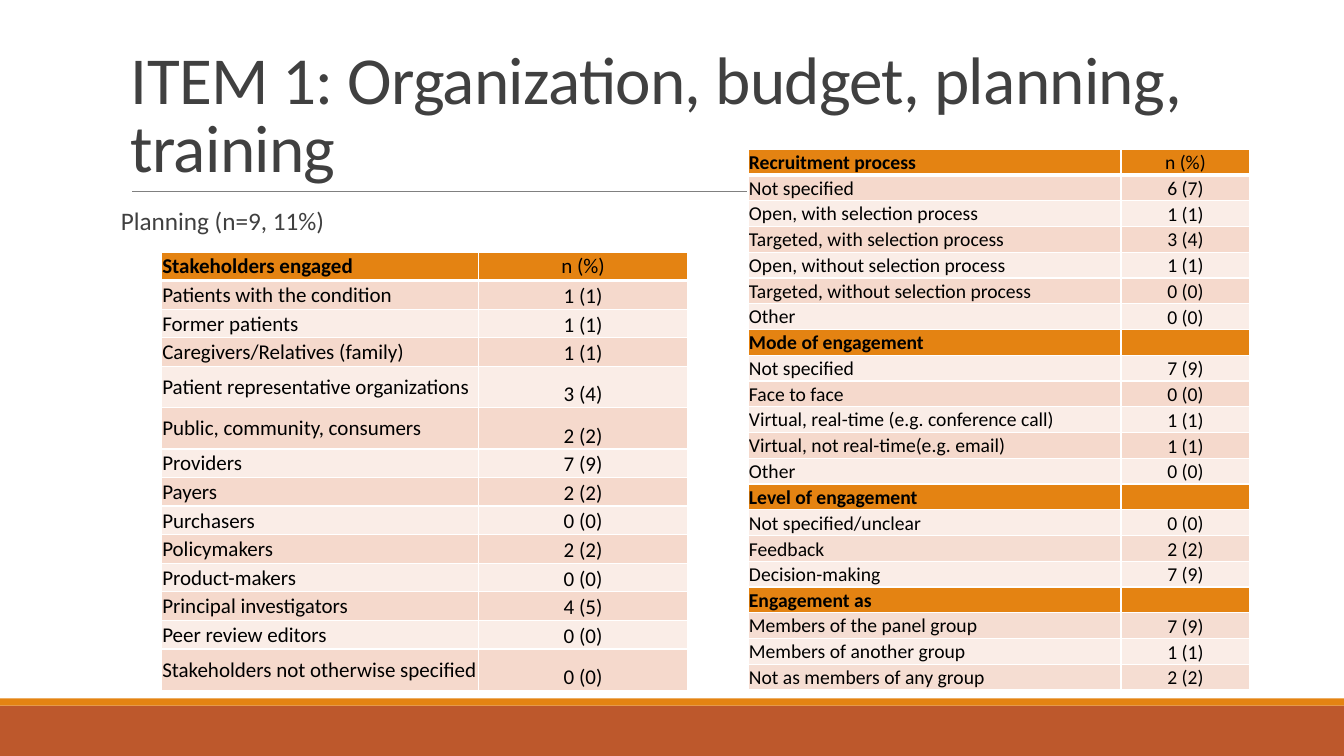
from lxml.etree import SubElement
from pptx import Presentation
from pptx.dml.color import RGBColor
from pptx.enum.shapes import MSO_CONNECTOR as CONN, MSO_SHAPE as SHAPE
from pptx.enum.text import MSO_ANCHOR as ANCHOR, PP_ALIGN as ALIGN
from pptx.oxml.ns import qn
from pptx.util import Inches, Pt

WHITE = RGBColor(0xFF, 0xFF, 0xFF)
BLACK = RGBColor(0x00, 0x00, 0x00)
INK = RGBColor(0x40, 0x40, 0x40)
GREY = RGBColor(0x80, 0x80, 0x80)
ORANGE = RGBColor(0xE4, 0x83, 0x12)
RUST = RGBColor(0xBD, 0x58, 0x2C)
PINK = RGBColor(0xF5, 0xD9, 0xCC)
ROSE = RGBColor(0xF5, 0xDD, 0xD2)
PALE = RGBColor(0xFA, 0xED, 0xE7)

# Each section: heading, heading value, two alternating row fills, rows
STAKEHOLDERS = [
    ("Stakeholders engaged", "n (%)", (PINK, PALE), [
        ("Patients with the condition", "1 (1)"),
        ("Former patients", "1 (1)"),
        ("Caregivers/Relatives (family)", "1 (1)"),
        ("Patient representative organizations", "3 (4)"),
        ("Public, community, consumers", "2 (2)"),
        ("Providers", "7 (9)"),
        ("Payers", "2 (2)"),
        ("Purchasers", "0 (0)"),
        ("Policymakers", "2 (2)"),
        ("Product-makers", "0 (0)"),
        ("Principal investigators", "4 (5)"),
        ("Peer review editors", "0 (0)"),
        ("Stakeholders not otherwise specified", "0 (0)")]),
]
ENGAGEMENT = [
    ("Recruitment process", "n (%)", (PINK, PALE), [
        ("Not specified", "6 (7)"),
        ("Open, with selection process", "1 (1)"),
        ("Targeted, with selection process", "3 (4)"),
        ("Open, without selection process", "1 (1)"),
        ("Targeted, without selection process", "0 (0)"),
        ("Other", "0 (0)")]),
    ("Mode of engagement", "", (PALE, PINK), [
        ("Not specified", "7 (9)"),
        ("Face to face", "0 (0)"),
        ("Virtual, real-time (e.g. conference call)", "1 (1)"),
        ("Virtual, not real-time(e.g. email)", "1 (1)"),
        ("Other", "0 (0)")]),
    ("Level of engagement", "", (PALE, ROSE), [
        ("Not specified/unclear", "0 (0)"),
        ("Feedback", "2 (2)"),
        ("Decision-making", "7 (9)")]),
    ("Engagement as", "", (ROSE, PALE), [
        ("Members of the panel group", "7 (9)"),
        ("Members of another group", "1 (1)"),
        ("Not as members of any group", "2 (2)")]),
]


def put_text(tf, text, size, color=BLACK, bold=False, align=ALIGN.LEFT,
             leading=None, before=0, after=0, spacing=None):
    p = tf.paragraphs[0]
    p.alignment = align
    p.space_before, p.space_after = Pt(before), Pt(after)
    if leading:
        p.line_spacing = leading
    if not text:  # keeps an empty cell as low as its row
        p._p.get_or_add_endParaRPr().set("sz", str(size * 100))
        return
    r = p.add_run()
    r.text = text
    r.font.name, r.font.size, r.font.bold = "Calibri", Pt(size), bold
    r.font.color.rgb = color
    if spacing:
        r.font._element.set("spc", str(int(spacing * 100)))


class Deck:
    """Style and current slide; lengths are in grid units of 0.1 inch."""

    UNIT = 0.1
    WIDTH, HEIGHT = 133.33, 75

    def __init__(self):
        self.prs = Presentation()
        self.prs.slide_width = self.grid(self.WIDTH)
        self.prs.slide_height = self.grid(self.HEIGHT)
        self.s = self.prs.slides.add_slide(self.prs.slide_layouts[6])

    def grid(self, n):
        return Inches(n * self.UNIT)

    def box(self, *lengths):
        return [self.grid(n) for n in lengths]

    def bar(self, top, height, color):
        sp = self.s.shapes.add_shape(
            SHAPE.RECTANGLE, *self.box(0, top, self.WIDTH, height))
        sp.shadow.inherit = False
        sp.fill.solid()
        sp.fill.fore_color.rgb = color
        sp.line.fill.background()

    def rule(self, left, right, y):
        ln = self.s.shapes.add_connector(
            CONN.STRAIGHT, *self.box(left, y, right, y))
        ln.line.color.rgb, ln.line.width = GREY, Pt(0.5)
        SubElement(ln._element.spPr, qn("a:effectLst"))

    def text(self, left, top, width, height, text, size, inset=1,
             anchor=ANCHOR.TOP, **fmt):
        sp = self.s.shapes.add_textbox(*self.box(left, top, width, height))
        tf = sp.text_frame
        tf.word_wrap, tf.vertical_anchor = True, anchor
        tf.margin_left = tf.margin_right = self.grid(inset)
        tf.margin_top = tf.margin_bottom = self.grid(0.5)
        put_text(tf, text, size, **fmt)

    def borders(self, cell, bottom):
        tcPr = cell._tc.get_or_add_tcPr()
        widths = {"a:lnL": 1, "a:lnR": 1, "a:lnT": 1, "a:lnB": bottom}
        for i, (side, width) in enumerate(widths.items()):
            ln = SubElement(tcPr, qn(side), w=str(Pt(width)))
            fill = SubElement(ln, qn("a:solidFill"))
            SubElement(fill, qn("a:srgbClr"), val=str(WHITE))
            tcPr.insert(i, ln)

    def cell(self, cell, text, size, fill, anchor, bottom, **fmt):
        cell.margin_left = cell.margin_right = cell.margin_top = self.grid(0.1)
        cell.margin_bottom = 0
        cell.vertical_anchor = anchor
        cell.fill.solid()
        cell.fill.fore_color.rgb = fill
        self.borders(cell, bottom)
        put_text(cell.text_frame, text, size, **fmt)

    def table(self, left, top, height, cols, sections, size, tall=(), tall_height=0,
              low_labels=()):
        rows = []
        for heading, value, fills, items in sections:
            rows.append((heading, value, ORANGE, True, ANCHOR.MIDDLE))
            label = ANCHOR.BOTTOM if heading in low_labels else ANCHOR.MIDDLE
            rows += [(*item, fills[i % 2], False, label)
                     for i, item in enumerate(items)]
        tbl = self.s.shapes.add_table(
            len(rows), 2, *self.box(left, top, sum(cols), height)).table
        for col, width in zip(tbl.columns, cols):
            col.width = self.grid(width)
        plain = (height - len(tall) * tall_height) / (len(rows) - len(tall))
        for i, (name, value, fill, head, anchor) in enumerate(rows):
            tbl.rows[i].height = self.grid(tall_height if i in tall else plain)
            bottom = 3 if i == 0 else 1
            self.cell(tbl.cell(i, 0), name, size, fill, anchor, bottom, bold=head)
            self.cell(tbl.cell(i, 1), value, size, fill,
                      ANCHOR.MIDDLE if head else ANCHOR.BOTTOM, bottom,
                      align=ALIGN.CENTER)


def main():
    d = Deck()
    # Footer bands and title rule
    d.bar(70, 5, RUST)
    d.bar(69.3, 0.7, ORANGE)
    d.rule(13.1, 122.1, 19)
    # Title and subtitle
    d.text(12, 3.1, 110, 15.9, "ITEM 1: Organization, budget, planning, training",
           48, anchor=ANCHOR.BOTTOM, color=INK, leading=0.85, spacing=-0.5)
    d.text(12, 20.2, 110, 44, "Planning (n=9, 11%)", 18, inset=0, color=INK,
           leading=0.9, before=12, after=2)
    # Tables
    d.table(16, 25, 43.5, (31.5, 20.7), STAKEHOLDERS, 15,
            tall=(4, 5, 13), tall_height=4.1)
    d.table(74.2, 14.8, 53.7, (37, 12.8), ENGAGEMENT, 14,
            low_labels=("Level of engagement",))
    d.prs.save("out.pptx")


if __name__ == "__main__":
    main()
